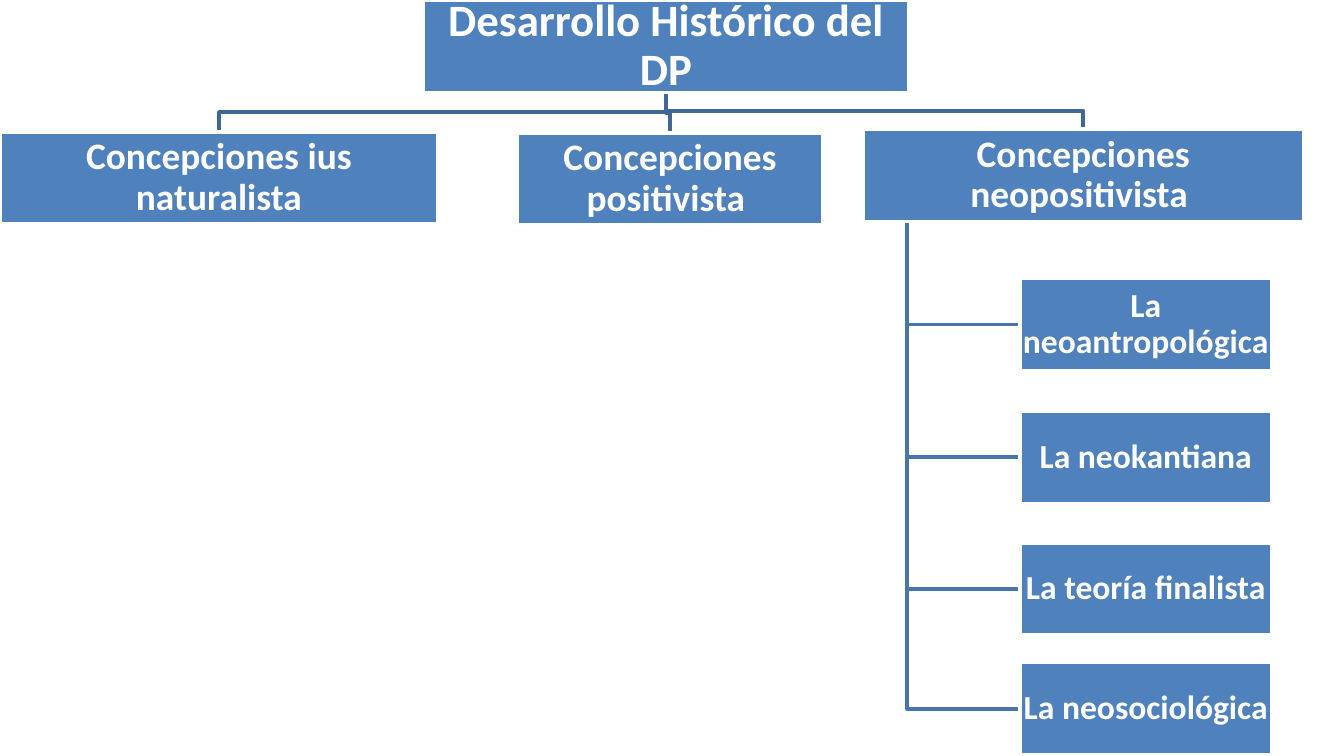
from pptx import Presentation
from pptx.dml.color import RGBColor
from pptx.enum.shapes import MSO_SHAPE
from pptx.enum.text import MSO_ANCHOR, MSO_AUTO_SIZE, PP_ALIGN
from pptx.util import Cm, Pt

BLUE, WHITE = "4F81BD", "FFFFFF"
ROOT_LINE, BRANCH_LINE = "3F6797", "4875AC"
BOX_H = 1.75

ROOT = ("Desarrollo Histórico del DP", (8, 0, 9.17, BOX_H))
CONCEPTIONS = [
    ("Concepciones ius naturalista", (0, 2.49, 8.28, BOX_H)),
    ("Concepciones positivista ", (9.78, 2.51, 5.77, BOX_H)),
    ("Concepciones neopositivista ", (16.31, 2.44, 8.33, BOX_H)),
]
THEORIES = [
    ("La neoantropológica", 5.26),
    ("La neokantiana", 7.77),
    ("La teoría finalista", 10.26),
    ("La neosociológica", 12.52),
]
THEORY_X, THEORY_W = 19.28, 4.75


def rgb(value):
    return RGBColor.from_string(value)


def write(sp, text, size, inset=0.03, color=WHITE, bold=True, font="Calibri"):
    tf = sp.text_frame
    tf.word_wrap = True
    tf.auto_size = MSO_AUTO_SIZE.NONE
    tf.vertical_anchor = MSO_ANCHOR.MIDDLE
    tf.margin_left = tf.margin_right = tf.margin_top = tf.margin_bottom = Cm(inset)
    p = tf.paragraphs[0]
    p.alignment = PP_ALIGN.CENTER
    p.line_spacing = 0.9
    r = p.add_run()
    r.text = text
    r.font.name, r.font.size, r.font.bold = font, Pt(size), bold
    r.font.color.rgb = rgb(color)


def paint(sp):
    sp.fill.solid()
    sp.fill.fore_color.rgb = rgb(BLUE)
    sp.line.color.rgb = rgb(WHITE)
    sp.line.width = Pt(2)


def add_box(s, text, box, size):
    sp = s.shapes.add_shape(MSO_SHAPE.RECTANGLE, *map(Cm, box))
    sp.shadow.inherit = False
    paint(sp)
    write(sp, text, size)


def add_elbow(s, points, color):
    start, *rest = [(Cm(x), Cm(y)) for x, y in points]
    builder = s.shapes.build_freeform(*start)
    builder.add_line_segments(rest, close=False)
    sp = builder.convert_to_shape()
    sp.shadow.inherit = False
    sp.fill.background()
    sp.line.color.rgb = rgb(color)
    sp.line.width = Pt(2)


def add_root(s, text, box):
    """Format the title placeholder as the top box, in front of the lines."""
    title = s.shapes.title
    title.left, title.top, title.width, title.height = map(Cm, box)
    paint(title)
    write(title, text, 24, inset=0.05)
    s.shapes._spTree.append(title._element)


def add_conceptions(s, root_box, conceptions):
    """Second row of boxes, each joined to the middle of the root box."""
    left, top, width, height = root_box
    x0, y0 = left + width / 2, top + height
    for _, (x, y, w, _) in reversed(conceptions):
        x1, mid = x + w / 2, (y0 + y) / 2
        add_elbow(s, [(x0, y0), (x0, mid), (x1, mid), (x1, y)], ROOT_LINE)
    for text, box in conceptions:
        add_box(s, text, box, 20)


def add_theories(s, parent_box, theories):
    """Hanging column of boxes on a trunk a tenth of the way into the parent."""
    left, top, width, height = parent_box
    trunk = left + width / 10
    for _, y in reversed(theories):
        mid = y + BOX_H / 2
        add_elbow(s, [(trunk, top + height), (trunk, mid), (THEORY_X, mid)], BRANCH_LINE)
    for text, y in theories:
        add_box(s, text, (THEORY_X, y, THEORY_W, BOX_H), 18)


def main():
    prs = Presentation()
    prs.slide_width, prs.slide_height = Cm(25.4), Cm(14.29)
    s = prs.slides.add_slide(prs.slide_layouts[5])
    add_theories(s, CONCEPTIONS[-1][1], THEORIES)
    add_conceptions(s, ROOT[1], CONCEPTIONS)
    add_root(s, *ROOT)
    prs.save("out.pptx")


if __name__ == "__main__":
    main()
